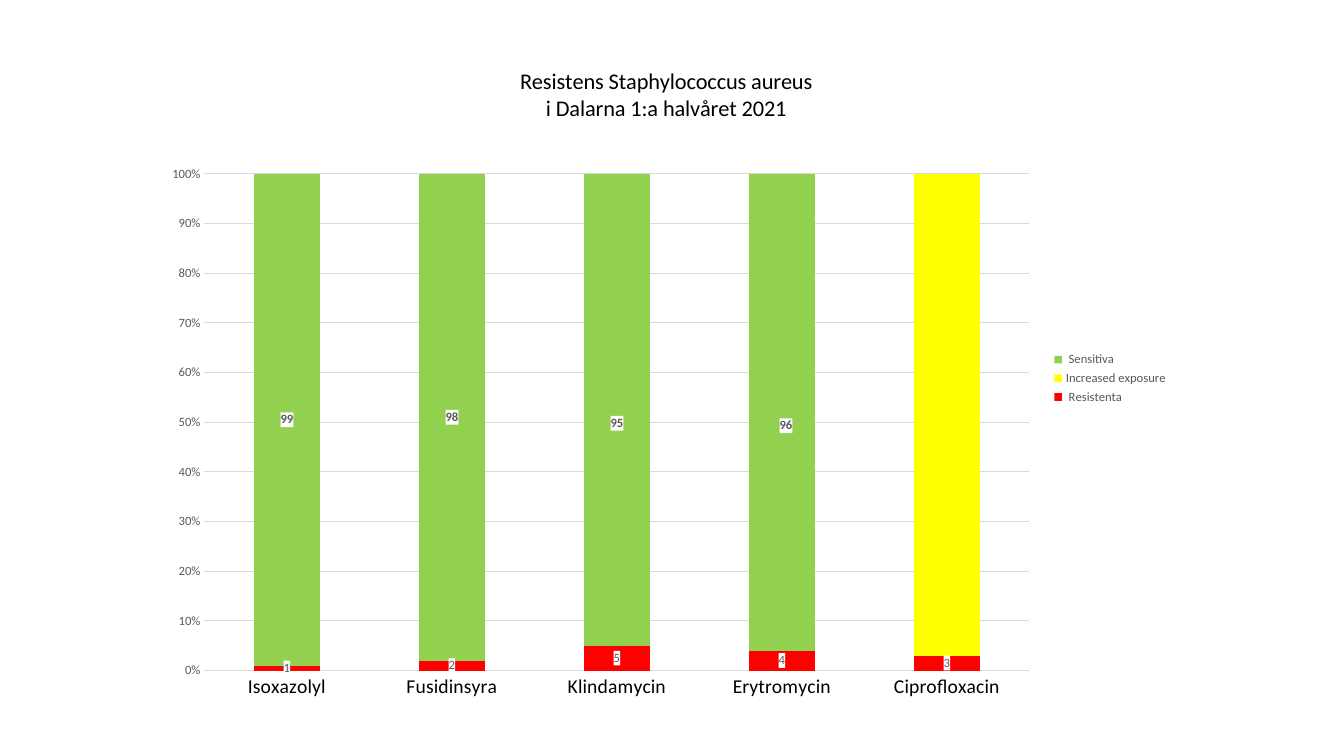
from dataclasses import dataclass, field

from pptx import Presentation
from pptx import util as u
from pptx.chart.data import CategoryChartData
from pptx.dml.color import RGBColor
from pptx.enum import chart as kinds
from pptx.oxml import parse_xml
from pptx.oxml.ns import nsdecls

FONT = "Calibri"
BLACK, GREY, PALE = "000000", "595959", "D9D9D9"
DRUGS = ["Isoxazolyl", "Fusidinsyra", "Klindamycin", "Erytromycin", "Ciprofloxacin"]
TITLE = "Resistens Staphylococcus aureus\ni Dalarna 1:a halvåret 2021"


@dataclass
class Outcome:
    name: str
    shares: list[int]
    colour: str
    labelled: bool = True
    bold: bool = False
    label_shifts: dict[int, tuple[float, float]] = field(default_factory=dict)


OUTCOMES = [
    Outcome(" Resistenta", [1, 2, 5, 4, 3], "FF0000"),
    Outcome("Increased exposure", [0, 0, 0, 0, 97], "FFFF00", labelled=False),
    Outcome(" Sensitiva", [99, 98, 95, 96, 0], "92D050", bold=True,
            label_shifts={2: (0, 0.02), 3: (0.004, 0.02)}),
]


def rgb(colour: str) -> RGBColor:
    return RGBColor.from_string(colour)


def style_font(font, *, size: float, colour: str, bold: bool = False) -> None:
    font.name, font.size, font.bold = FONT, u.Pt(size), bold
    font.color.rgb = rgb(colour)


def style_line(line) -> None:
    line.color.rgb = rgb(PALE)
    line.width = u.Pt(0.75)


def set_layout(parent, index: int, **settings: str | float) -> None:
    """Give a chart part a manual layout, as its child at the given index."""
    for old in parent.xpath("c:layout"):
        parent.remove(old)
    rows = "".join(f'<c:{key} val="{value}"/>' for key, value in settings.items())
    parent.insert(index, parse_xml(
        f'<c:layout {nsdecls("c")}><c:manualLayout>{rows}</c:manualLayout></c:layout>'))


def whiten_labels(chart) -> None:
    for text_style in chart.element.xpath(".//c:dLbls/c:txPr | .//c:dLbl/c:txPr"):
        text_style.addprevious(parse_xml(
            f'<c:spPr {nsdecls("c", "a")}><a:solidFill>'
            '<a:srgbClr val="FFFFFF"/></a:solidFill></c:spPr>'))


def format_series(series, outcome: Outcome) -> None:
    series.format.fill.solid()
    series.format.fill.fore_color.rgb = rgb(outcome.colour)
    if not outcome.labelled:
        return
    labels = series.data_labels
    labels.show_value = True
    labels.number_format = "0;;;"  # zero stays unlabelled
    labels.number_format_is_linked = False
    style_font(labels.font, size=9, colour=GREY, bold=outcome.bold)
    for index, (right, down) in outcome.label_shifts.items():
        style_font(series.points[index].data_label.font,
                   size=9, colour=GREY, bold=outcome.bold)
        label = series._element.xpath(f"c:dLbls/c:dLbl[c:idx/@val='{index}']")[0]
        set_layout(label, 1, x=right, y=down)


def format_axes(chart) -> None:
    for axis, size, colour in ((chart.category_axis, 14, BLACK),
                               (chart.value_axis, 9, GREY)):
        axis.major_tick_mark = axis.minor_tick_mark = kinds.XL_TICK_MARK.NONE
        style_font(axis.tick_labels.font, size=size, colour=colour)
    style_line(chart.category_axis.format.line)
    shares = chart.value_axis
    shares.major_unit = 0.1
    shares.tick_labels.number_format = "0%"
    shares.tick_labels.number_format_is_linked = False
    shares.format.line.fill.background()
    style_line(shares.major_gridlines.format.line)


def format_title(chart) -> None:
    title = chart.chart_title
    title.text_frame.text = TITLE
    for para in title.text_frame.paragraphs:
        style_font(para.font, size=16, colour=BLACK)
        for span in para.runs:
            style_font(span.font, size=16, colour=BLACK)
    set_layout(chart.element.xpath("c:chart/c:title")[0], 1,
               xMode="edge", yMode="edge", x=0.355, y=0.03)


def add_resistance_chart(page) -> None:
    table = CategoryChartData(number_format="0")
    table.categories = DRUGS
    for outcome in OUTCOMES:
        table.add_series(outcome.name, outcome.shares)
    chart = page.shapes.add_chart(
        kinds.XL_CHART_TYPE.COLUMN_STACKED_100,
        u.Cm(3.86), u.Cm(1.09), u.Cm(25.83), u.Cm(16.89), table).chart
    style_font(chart.font, size=10, colour=BLACK)

    plot = chart.plots[0]
    plot.gap_width, plot.overlap, plot.vary_by_categories = 150, 100, False
    for series, outcome in zip(plot.series, OUTCOMES):
        format_series(series, outcome)
    whiten_labels(chart)
    format_axes(chart)
    format_title(chart)

    chart.has_legend = True
    chart.legend.position = kinds.XL_LEGEND_POSITION.RIGHT
    chart.legend.include_in_layout = False
    style_font(chart.legend.font, size=9, colour=GREY)
    set_layout(chart.element.xpath("c:chart/c:plotArea")[0], 0,
               layoutTarget="inner", xMode="edge", yMode="edge",
               x=0.05, y=0.195, w=0.805, h=0.741)


def main() -> None:
    deck = Presentation()
    deck.slide_width, deck.slide_height = u.Cm(33.87), u.Cm(19.05)
    add_resistance_chart(deck.slides.add_slide(deck.slide_layouts[6]))
    deck.save("out.pptx")


if __name__ == "__main__":
    main()
